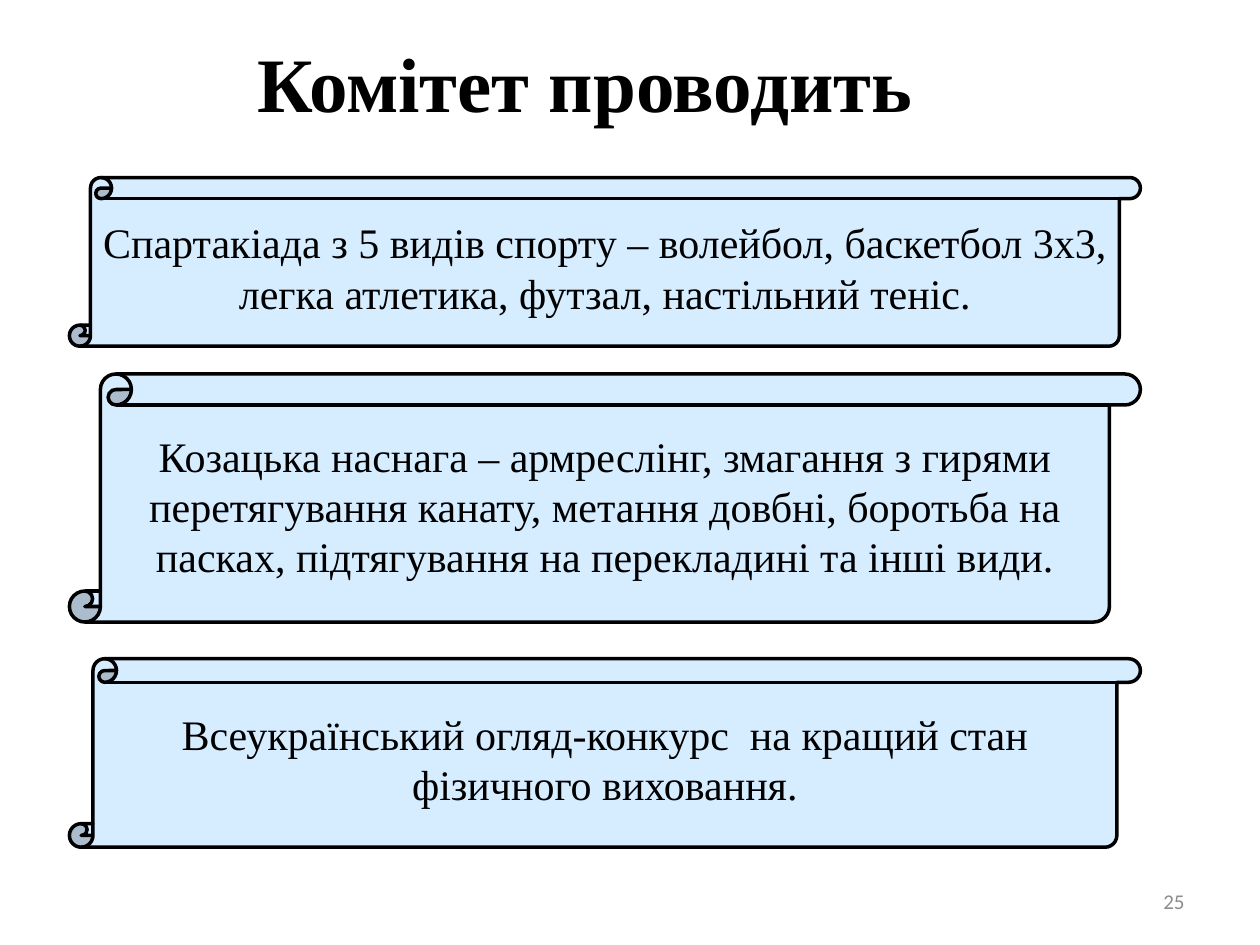
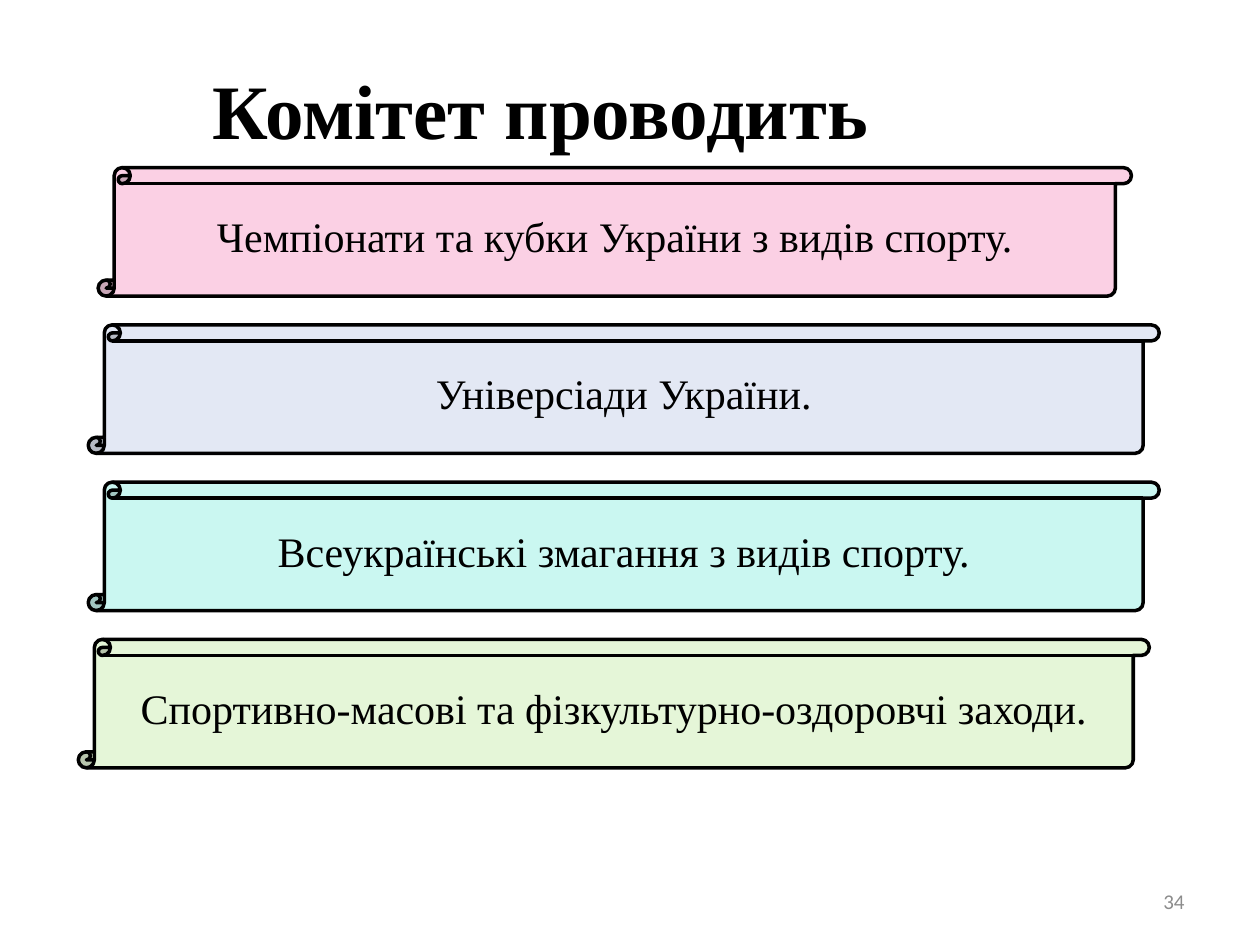
from dataclasses import dataclass

from pptx import Presentation
from pptx.dml.color import RGBColor
from pptx.enum import shapes, text
from pptx.util import Cm, Pt


@dataclass(frozen=True)
class Theme:
    serif: str = "Times New Roman"
    sans: str = "Calibri"
    ink: str = "000000"
    gray: str = "8C8C8C"
    blue: str = "D6ECFF"
    pink: str = "FBD0E4"
    lilac: str = "E3E8F4"
    aqua: str = "CAF7F1"
    green: str = "E5F6D8"
    head: int = 44
    body: int = 24
    note: int = 12
    line: int = 2


T = Theme()
TITLE = "Комітет проводить"
NUMBER = (18.21, 17.65, 5.92, 1.02)  # boxes are left, top, width, height in cm


def color(code):
    return RGBColor.from_string(code)


def write(shape, *lines, font=T.serif, size=T.body, ink=T.ink, bold=False,
          align=text.PP_ALIGN.CENTER, inset=0.25):
    """Fill a shape with one paragraph per line."""
    frame = shape.text_frame
    frame.word_wrap = True
    frame.auto_size = text.MSO_AUTO_SIZE.NONE
    frame.vertical_anchor = text.MSO_ANCHOR.MIDDLE
    frame.margin_left = frame.margin_right = Cm(inset)
    for i, line in enumerate(lines):
        para = frame.add_paragraph() if i else frame.paragraphs[0]
        para.alignment = align
        run = para.add_run()
        run.text = line
        run.font.name, run.font.size, run.font.bold = font, Pt(size), bold
        run.font.color.rgb = color(ink)


def add_page(deck, box, number):
    """Start a slide with its title and page number."""
    page = deck.slides.add_slide(deck.slide_layouts[5])
    title = page.shapes.title
    title.left, title.top, title.width, title.height = map(Cm, box)
    write(title, TITLE, size=T.head, bold=True)
    note = page.shapes.add_textbox(*map(Cm, NUMBER))
    write(note, number, font=T.sans, size=T.note, ink=T.gray,
          align=text.PP_ALIGN.RIGHT)
    return page


def add_scroll(page, box, fill, *lines):
    """Draw a paper scroll with centred text."""
    scroll = page.shapes.add_shape(
        shapes.MSO_SHAPE.VERTICAL_SCROLL, *map(Cm, box))
    scroll.shadow.inherit = False
    scroll.fill.solid()
    scroll.fill.fore_color.rgb = color(fill)
    scroll.line.color.rgb = color(T.ink)
    scroll.line.width = Pt(T.line)
    write(scroll, *lines, inset=0.2)


def add_contests(deck):
    """Blue scrolls of varying height."""
    page = add_page(deck, (2.39, 0.58, 18.8, 2.13), "25")
    left, width = 1.4, 21.59
    rows = [
        (3.58, 3.4, ["Спартакіада з 5 видів спорту – волейбол, баскетбол 3х3, "
                     "легка атлетика, футзал, настільний теніс."]),
        (7.54, 5, ["Козацька наснага – армреслінг, змагання з гирями",
                   "перетягування канату, метання довбні, боротьба на "
                   "пасках, підтягування на перекладині та інші види."]),
        (13.28, 3.8, ["Всеукраїнський огляд-конкурс  на кращий стан "
                      "фізичного виховання."]),
    ]
    for top, height, lines in rows:
        add_scroll(page, (left, top, width, height), T.blue, *lines)


def add_events(deck):
    """Coloured scrolls of one height, evenly spaced."""
    page = add_page(deck, (1.5, 1.12, 18.8, 2.13), "34")
    top, height, gap = 3.38, 2.59, 0.58
    rows = [
        (1.98, 20.83, T.pink, "Чемпіонати та кубки України з видів спорту."),
        (1.78, 21.59, T.lilac, "Універсіади України."),
        (1.78, 21.59, T.aqua, "Всеукраїнські змагання з видів спорту."),
        (1.58, 21.59, T.green,
         "Спортивно-масові та фізкультурно-оздоровчі заходи."),
    ]
    for i, (left, width, fill, line) in enumerate(rows):
        box = (left, top + i * (height + gap), width, height)
        add_scroll(page, box, fill, line)


def main():
    deck = Presentation()
    deck.slide_width, deck.slide_height = Cm(25.4), Cm(19.05)
    add_contests(deck)
    add_events(deck)
    deck.save("out.pptx")


if __name__ == "__main__":
    main()
